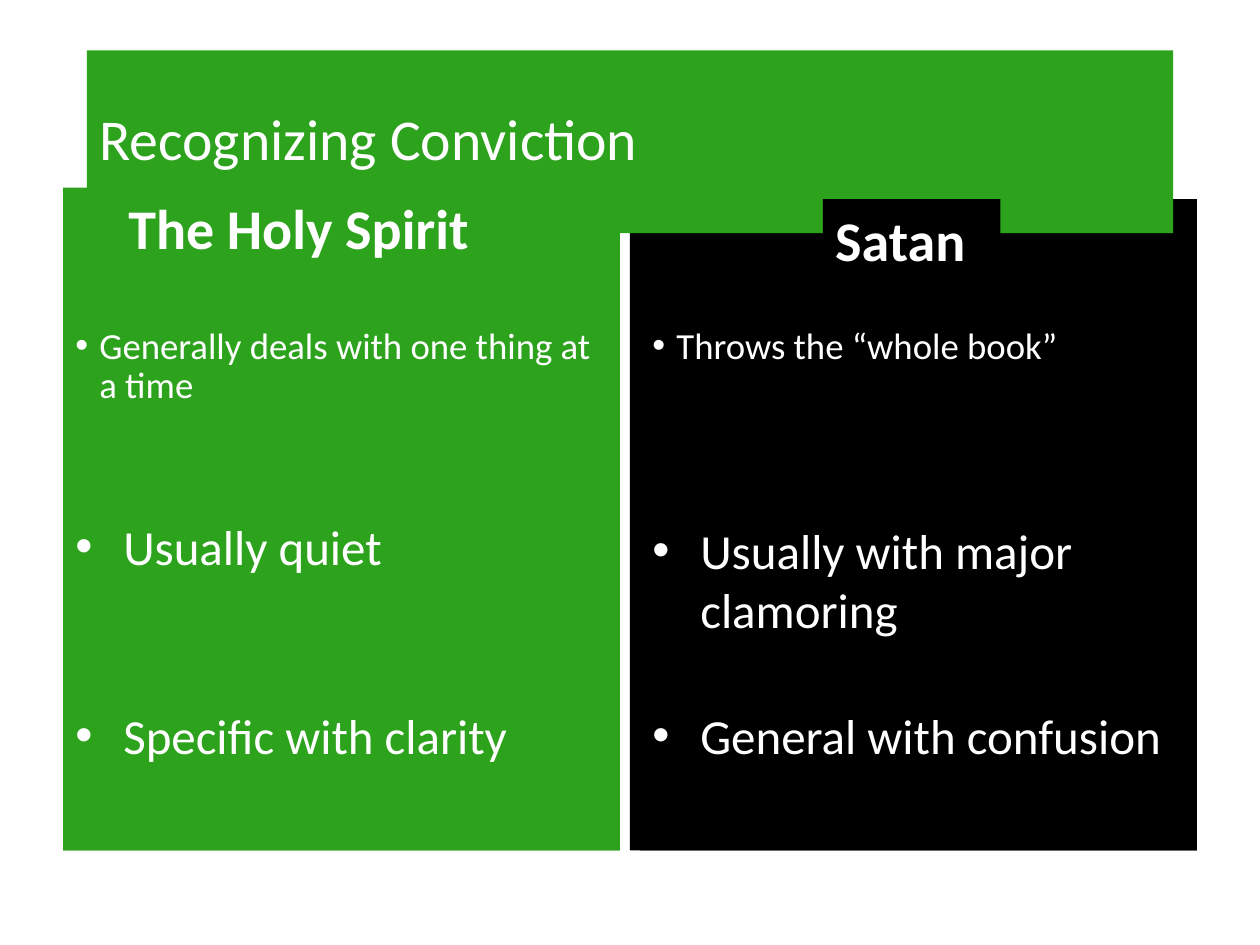
from dataclasses import dataclass

import pptx
import pptx.dml.color
import pptx.enum.shapes
import pptx.enum.text
import pptx.oxml
import pptx.oxml.ns
import pptx.util

WIDTH, HEIGHT = 10, 7.5
COLORS = {"spirit": "2DA31D", "satan": "000000", "text": "FFFFFF"}
FONT = "Calibri"
COLUMN_WIDTH, ROW_HEIGHT = 4.42, 1.2
FIRST_ROW, ROW_PITCH = 2.55, 1.5


@dataclass(frozen=True)
class Box:
    left: float
    top: float
    width: float
    height: float

    def lengths(self):
        return [pptx.util.Inches(n) for n in (self.left, self.top, self.width, self.height)]


@dataclass(frozen=True)
class Side:
    color: str
    panel: Box
    heading: str
    heading_box: Box
    left: float
    points: tuple[str, ...]
    nudges: tuple[float, ...]


@dataclass(frozen=True)
class PointStyle:
    size: float
    indent: float
    line_spacing: float


LEAD = PointStyle(21, 0.19, 0.9)
FOLLOWING = PointStyle(28, 0.38, 1)

SIDES = (
    Side("spirit", Box(0.5, 1.49, COLUMN_WIDTH, 5.26),
         "The Holy Spirit", Box(0.92, 1.49, 3.03, 0.64), 0.5,
         ("Generally deals with one thing at a time", "Usually quiet",
          "Specific with clarity"), (0, 0, 0)),
    Side("satan", Box(5, 1.58, 4.5, 5.17),
         "Satan", Box(6.53, 1.58, 1.41, 0.63), 5.08,
         ("Throws the “whole book”", "Usually with major clamoring",
          "General with confusion"), (0, 0.03, 0)),
)


def rgb(name: str) -> pptx.dml.color.RGBColor:
    return pptx.dml.color.RGBColor.from_string(COLORS[name])


def fill(shape, color: str) -> None:
    shape.fill.solid()
    shape.fill.fore_color.rgb = rgb(color)


def style(paragraph, size: float, bold: bool = False, line_spacing: float = 1) -> None:
    paragraph.alignment = pptx.enum.text.PP_ALIGN.LEFT
    paragraph.line_spacing = line_spacing
    paragraph.font.name = FONT
    paragraph.font.size = pptx.util.Pt(size)
    paragraph.font.bold = bold
    paragraph.font.color.rgb = rgb("text")


def add_bullet(paragraph, indent: float) -> None:
    properties = paragraph._p.get_or_add_pPr()
    hang = pptx.util.Inches(indent)
    properties.set("marL", str(hang))
    properties.set("indent", str(-hang))
    namespace = pptx.oxml.ns.nsdecls("a")
    properties.append(pptx.oxml.parse_xml(f'<a:buFont {namespace} typeface="Arial"/>'))
    properties.append(pptx.oxml.parse_xml(f'<a:buChar {namespace} char="•"/>'))


def add_panel(slide, side: Side) -> None:
    panel = slide.shapes.add_shape(
        pptx.enum.shapes.MSO_SHAPE.RECTANGLE, *side.panel.lengths())
    panel.shadow.inherit = False
    fill(panel, side.color)
    panel.line.fill.background()


def add_text(slide, box: Box, text: str, color: str, wrap: bool):
    """Add a filled text box and return its paragraph."""
    text_box = slide.shapes.add_textbox(*box.lengths())
    fill(text_box, color)
    text_box.text_frame.word_wrap = wrap
    paragraph = text_box.text_frame.paragraphs[0]
    paragraph.text = text
    return paragraph


def add_heading(slide, side: Side) -> None:
    heading = add_text(slide, side.heading_box, side.heading, side.color, wrap=False)
    style(heading, 32, bold=True)


def add_points(slide, side: Side) -> None:
    for row, (text, nudge) in enumerate(zip(side.points, side.nudges)):
        look = FOLLOWING if row else LEAD
        box = Box(side.left, FIRST_ROW + row * ROW_PITCH + nudge, COLUMN_WIDTH, ROW_HEIGHT)
        point = add_text(slide, box, text, side.color, wrap=True)
        add_bullet(point, look.indent)
        style(point, look.size, line_spacing=look.line_spacing)


def place_title(slide, text: str, box: Box) -> None:
    """Format the title and bring it in front of the panels."""
    title = slide.shapes.title
    title.left, title.top, title.width, title.height = box.lengths()
    fill(title, "spirit")
    frame = title.text_frame
    frame.text = text
    frame.vertical_anchor = pptx.enum.text.MSO_ANCHOR.MIDDLE
    frame.auto_size = pptx.enum.text.MSO_AUTO_SIZE.NONE
    style(frame.paragraphs[0], 33, line_spacing=0.9)
    slide.shapes.element.append(title.element)


def main() -> None:
    presentation = pptx.Presentation()
    presentation.slide_width = pptx.util.Inches(WIDTH)
    presentation.slide_height = pptx.util.Inches(HEIGHT)
    slide = presentation.slides.add_slide(presentation.slide_layouts.get_by_name("Title Only"))
    for side in reversed(SIDES):
        add_panel(slide, side)
    place_title(slide, "Recognizing Conviction", Box(0.69, 0.4, 8.62, 1.45))
    for side in SIDES:
        add_heading(slide, side)
        add_points(slide, side)
    presentation.save("out.pptx")


if __name__ == "__main__":
    main()
